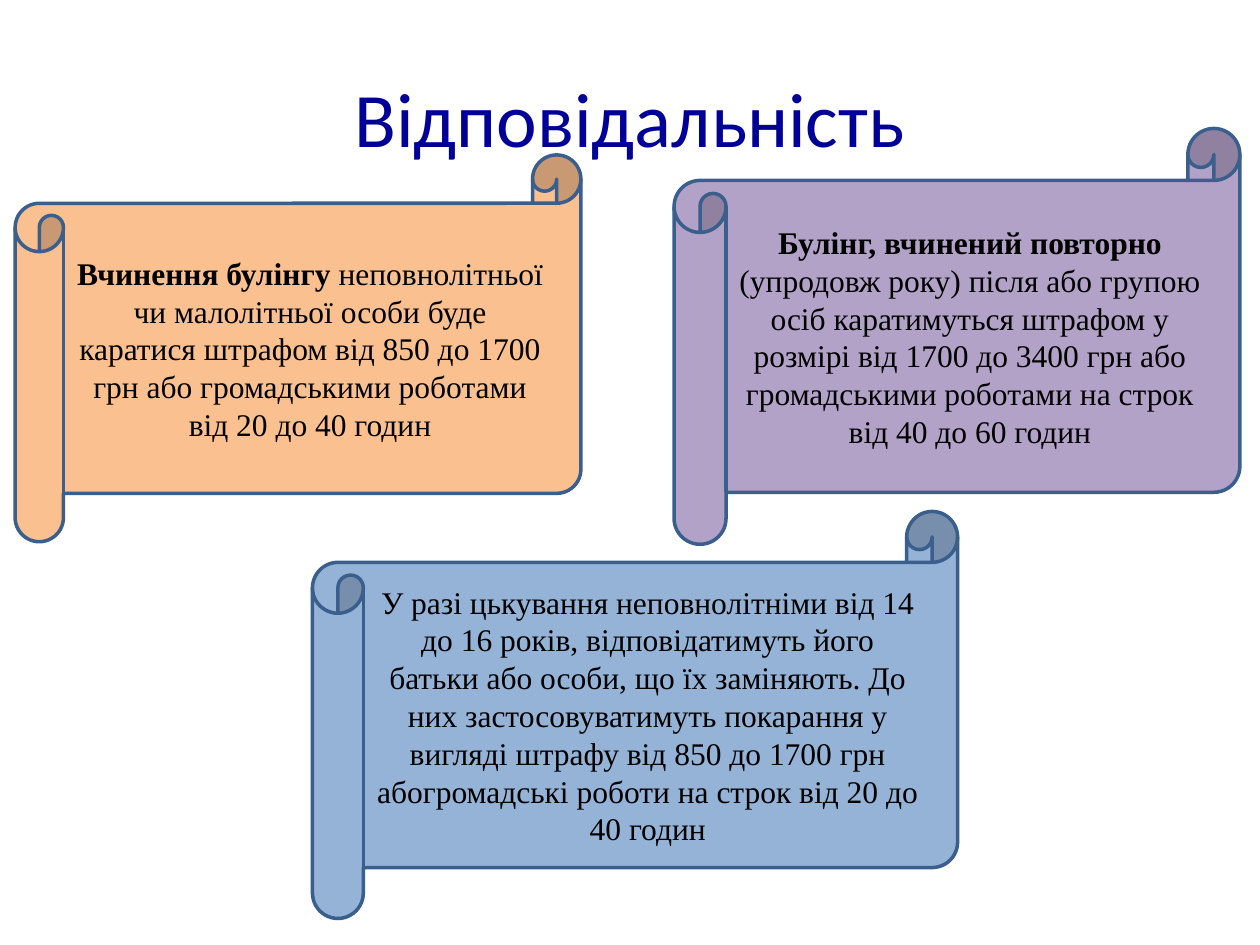
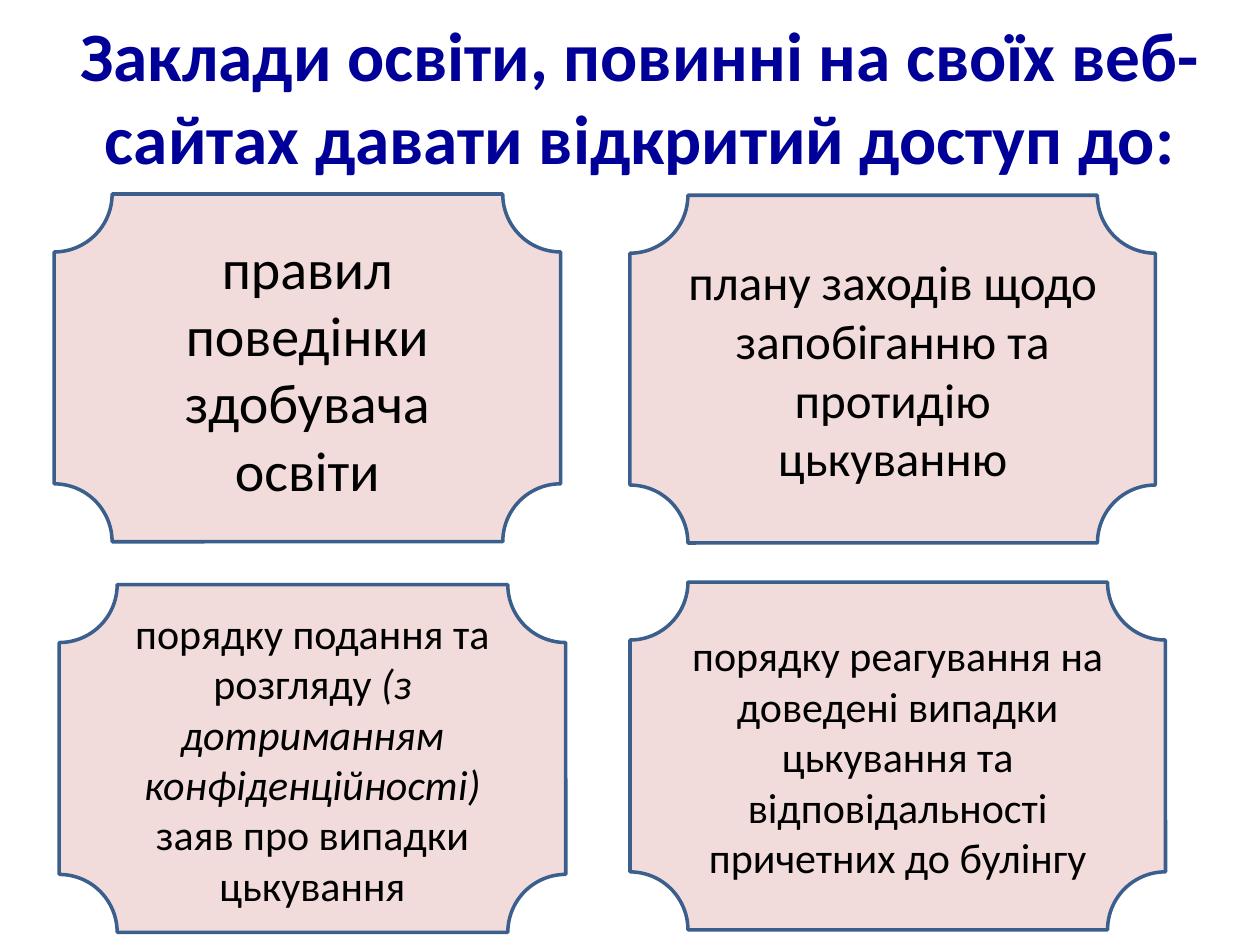
"""Build two slides on the liability for bullying and the duties of schools."""
from dataclasses import dataclass

from pptx import Presentation
from pptx.dml.color import RGBColor
from pptx.enum.shapes import MSO_SHAPE
from pptx.enum.text import MSO_ANCHOR, MSO_AUTO_SIZE, PP_ALIGN
from pptx.util import Inches, Pt

SCROLL = MSO_SHAPE.HORIZONTAL_SCROLL
PLAQUE = MSO_SHAPE.PLAQUE
CENTER = PP_ALIGN.CENTER
MIDDLE = MSO_ANCHOR.MIDDLE
FIXED = MSO_AUTO_SIZE.NONE

WIDTH, HEIGHT = Inches(10), Inches(7.5)
COLS, ROWS = 100, 75
TITLE_ONLY = 5


@dataclass(frozen=True)
class Theme:
    navy: str = "000099"
    ink: str = "000000"
    edge: str = "3A5F8C"
    peach: str = "FAC090"
    lilac: str = "B3A2C7"
    sky: str = "95B3D7"
    rose: str = "F2DCDB"
    sans: str = "Calibri"
    serif: str = "Times New Roman"
    head: float = 44
    long_head: float = 39.6
    large: float = 32
    medium: float = 28
    small: float = 24
    note: float = 18
    stroke: float = 2


THEME = Theme()


def place(shape, box):
    col, row, wide, high = box
    shape.left, shape.width = (int(WIDTH * n / COLS) for n in (col, wide))
    shape.top, shape.height = (int(HEIGHT * n / ROWS) for n in (row, high))


def write(shape, *parts, size, font=THEME.sans, color=THEME.ink, bold=False):
    frame = shape.text_frame
    frame.word_wrap = True
    frame.auto_size = FIXED
    frame.vertical_anchor = MIDDLE
    line = frame.paragraphs[0]
    line.alignment = CENTER
    for part in parts:
        text, style = part if isinstance(part, tuple) else (part, "")
        run = line.add_run()
        run.text = text
        run.font.name = font
        run.font.size = Pt(size)
        run.font.bold = bold or style == "bold"
        run.font.italic = style == "italic"
        run.font.color.rgb = RGBColor.from_string(color)


def add_page(deck, title, box, **style):
    page = deck.slides.add_slide(deck.slide_layouts[TITLE_ONLY])
    place(page.shapes.title, box)
    write(page.shapes.title, title, color=THEME.navy, **style)
    return page


def add_card(page, kind, box, fill, *parts, **style):
    card = page.shapes.add_shape(kind, 0, 0, 0, 0)
    place(card, box)
    card.shadow.inherit = False
    card.fill.solid()
    card.fill.fore_color.rgb = RGBColor.from_string(fill)
    card.line.color.rgb = RGBColor.from_string(THEME.edge)
    card.line.width = Pt(THEME.stroke)
    write(card, *parts, **style)


def add_fines(deck):
    page = add_page(deck, "Відповідальність", (5, 3, 90, 12.5), size=THEME.head)
    scrolls = [
        ((1.2, 12.3, 44.9, 30.7), THEME.peach,
         ("Вчинення булінгу ", "bold"),
         "неповнолітньої чи малолітньої особи буде каратися штрафом "
         "від 850 до 1700 грн або громадськими роботами "
         "від 20 до 40 годин"),
        ((53.5, 10.2, 44.9, 33), THEME.lilac,
         ("Булінг, вчинений повторно ", "bold"),
         "(упродовж року) після або групою осіб каратимуться штрафом "
         "у розмірі від 1700 до 3400 грн або громадськими роботами "
         "на строк від 40 до 60 годин"),
        ((24.8, 40.6, 51.2, 32.3), THEME.sky,
         "У разі цькування неповнолітніми від 14 до 16 років, "
         "відповідатимуть його батьки або особи, що їх заміняють. "
         "До них застосовуватимуть покарання у вигляді штрафу "
         "від 850 до 1700 грн абогромадські роботи на строк "
         "від 20 до 40 годин"),
    ]
    for box, fill, *parts in scrolls:
        add_card(page, SCROLL, box, fill, *parts,
                 size=THEME.note, font=THEME.serif)


def add_duties(deck):
    page = add_page(
        deck,
        "Заклади освіти, повинні на своїх веб-сайтах давати "
        "відкритий доступ до:",
        (1.6, 1.3, 98.4, 12.5), size=THEME.long_head, bold=True)
    high = 27.6
    plaques = [
        ((4.3, 15.4, 40.2, high), THEME.large,
         "правил поведінки здобувача освіти"),
        ((50, 15.5, 41.7, high), THEME.medium,
         "плану заходів щодо запобіганню та протидію цькуванню"),
        ((4.7, 46.4, 40.2, high), THEME.small,
         "порядку подання та розгляду ",
         ("(з дотриманням конфіденційності)", "italic"),
         " заяв про випадки цькування"),
        ((50, 46.2, 42.5, high), THEME.small,
         "порядку реагування на доведені випадки цькування "
         "та відповідальності причетних до булінгу"),
    ]
    for box, size, *parts in plaques:
        add_card(page, PLAQUE, box, THEME.rose, *parts, size=size)


def main():
    deck = Presentation()
    deck.slide_width, deck.slide_height = WIDTH, HEIGHT
    add_fines(deck)
    add_duties(deck)
    deck.save("out.pptx")


if __name__ == "__main__":
    main()
